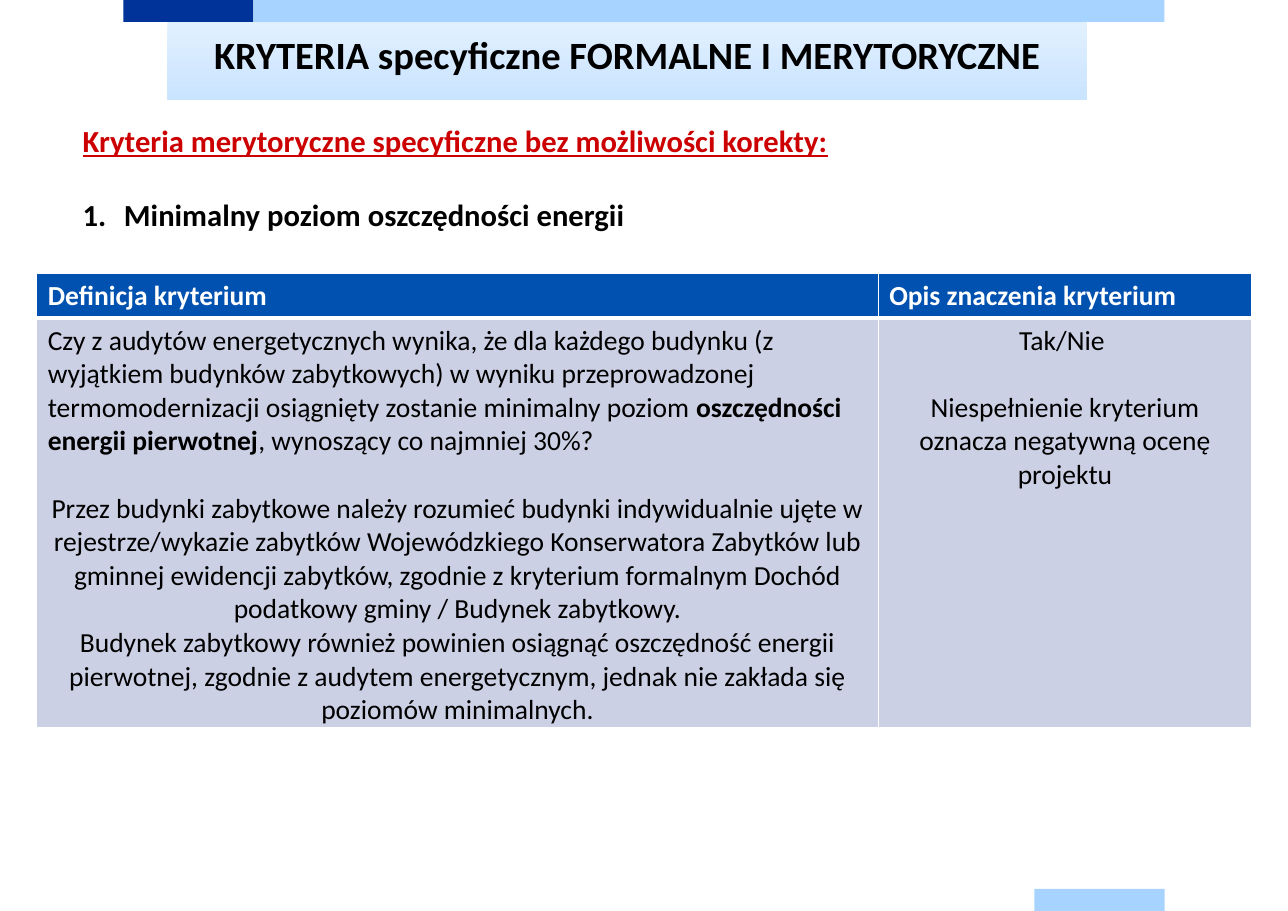
from dataclasses import dataclass

from lxml.etree import SubElement
from pptx import Presentation
from pptx.dml.color import RGBColor
from pptx.enum.shapes import MSO_SHAPE
from pptx.enum.text import MSO_ANCHOR, MSO_AUTO_SIZE, PP_ALIGN
from pptx.oxml.ns import qn
from pptx.util import Pt

FONT = "Calibri"
NAVY = RGBColor(0x00, 0x33, 0x99)
SKY = RGBColor(0xA6, 0xD3, 0xFF)
PALE = RGBColor(0xE1, 0xF0, 0xFF)
MIST = RGBColor(0xCA, 0xE4, 0xFF)
BLUE = RGBColor(0x00, 0x51, 0xB0)
GREY = RGBColor(0xCC, 0xD0, 0xE4)
RED = RGBColor(0xCC, 0x00, 0x00)
BLACK = RGBColor(0x00, 0x00, 0x00)
WHITE = RGBColor(0xFF, 0xFF, 0xFF)


@dataclass
class Bar:
    left: float
    top: float
    width: float
    color: RGBColor


@dataclass
class Para:
    """Text pieces, every second one in the opposite weight."""
    texts: list[str]
    size: float = 18
    color: RGBColor = BLACK
    bold: bool = False
    line: bool = False
    align: PP_ALIGN = PP_ALIGN.LEFT
    gap: float = 0
    bullet: str = "buNone"


@dataclass
class Cell:
    paras: list[Para]
    fill: RGBColor
    top: float
    bottom: float
    foot: float


MID = PP_ALIGN.CENTER
BAR_H = 14.4
BARS = [
    Bar(80.6, 0, 85, NAVY),
    Bar(165.6, 0, 595.4, SKY),
    Bar(676, 581, 85, SKY),
]
TITLE = Para(["KRYTERIA specyficzne FORMALNE I MERYTORYCZNE"], 25.2, bold=True, align=MID)
LIST = [
    Para(["Kryteria merytoryczne specyficzne bez możliwości korekty:"],
         20, RED, bold=True, line=True),
    Para(["Minimalny poziom oszczędności energii"],
         20, bold=True, gap=24.4, bullet="buAutoNum"),
]
HEAD = ["Definicja kryterium", "Opis znaczenia kryterium"]
BODY = [
    [
        Para(["Czy z audytów energetycznych wynika, że dla każdego budynku "
              "(z wyjątkiem budynków zabytkowych) w wyniku przeprowadzonej "
              "termomodernizacji osiągnięty zostanie minimalny poziom ",
              "oszczędności energii pierwotnej",
              ", wynoszący co najmniej 30%?"]),
        Para(["Przez budynki zabytkowe należy rozumieć budynki indywidualnie "
              "ujęte w rejestrze/wykazie zabytków Wojewódzkiego Konserwatora "
              "Zabytków lub gminnej ewidencji zabytków, zgodnie z kryterium "
              "formalnym Dochód podatkowy gminy / Budynek zabytkowy."],
             align=MID, gap=22),
        Para(["Budynek zabytkowy również powinien osiągnąć oszczędność energii "
              "pierwotnej, zgodnie z audytem energetycznym, jednak nie zakłada "
              "się poziomów minimalnych."], align=MID),
    ],
    [
        Para(["Tak/Nie "], align=MID),
        Para(["Niespełnienie kryterium oznacza negatywną ocenę projektu"],
             align=MID, gap=22),
    ],
]
ROWS = [
    [Cell([Para([name], color=WHITE, bold=True)], BLUE, 1, 3, 3.6) for name in HEAD],
    [Cell(paras, GREY, 3, 1, 0) for paras in BODY],
]


def place(shape, left: float, top: float, width: float, height: float) -> None:
    shape.left, shape.top = Pt(left), Pt(top)
    shape.width, shape.height = Pt(width), Pt(height)


def write(frame, paras: list[Para]) -> None:
    for i, para in enumerate(paras):
        item = frame.paragraphs[0] if i == 0 else frame.add_paragraph()
        props = item._p.get_or_add_pPr()
        mark = SubElement(props, qn(f"a:{para.bullet}"))
        dent = 0
        if para.bullet == "buAutoNum":
            mark.set("type", "arabicPeriod")
            dent = Pt(27)
        props.set("marL", str(dent))
        props.set("indent", str(-dent))
        item.alignment = para.align
        item.space_before = Pt(para.gap)
        for n, text in enumerate(para.texts):
            run = item.add_run()
            run.text = text
            font = run.font
            font.name, font.size = FONT, Pt(para.size)
            font.bold = para.bold != (n % 2 == 1)
            font.underline = para.line
            font.color.rgb = para.color


def edge(cell, tag: str, width: float) -> None:
    """Add a white border on one side of a table cell."""
    line = SubElement(cell._tc.get_or_add_tcPr(), qn(f"a:{tag}"), w=str(Pt(width)))
    fill = SubElement(line, qn("a:solidFill"))
    SubElement(fill, qn("a:srgbClr"), val=str(WHITE))


def draw_bar(slide, bar: Bar) -> None:
    shape = slide.shapes.add_shape(
        MSO_SHAPE.RECTANGLE, Pt(bar.left), Pt(bar.top), Pt(bar.width), Pt(BAR_H))
    shape.shadow.inherit = False
    shape.fill.solid()
    shape.fill.fore_color.rgb = bar.color
    shape.line.fill.background()


def draw_title(slide) -> None:
    title = slide.shapes.title
    place(title, 109.4, BAR_H, 601.2, 51.1)
    title.fill.gradient()
    title.fill.gradient_angle = 270
    for stop, color, spot in zip(title.fill.gradient_stops, (PALE, MIST), (0, 1)):
        stop.color.rgb, stop.position = color, spot
    frame = title.text_frame
    frame.margin_left = frame.margin_right = 0
    frame.margin_top = frame.margin_bottom = 0
    frame.vertical_anchor = MSO_ANCHOR.TOP
    frame.auto_size = MSO_AUTO_SIZE.NONE
    write(frame, [TITLE])
    frame.paragraphs[0].line_spacing = Pt(36)


def draw_list(slide) -> None:
    body = slide.placeholders[1]
    place(body, 46.8, 76.3, 748, 101.5)
    body.text_frame.auto_size = MSO_AUTO_SIZE.NONE
    write(body.text_frame, LIST)


def draw_table(slide) -> None:
    table = slide.shapes.add_table(
        2, 2, Pt(24), Pt(178.8), Pt(794), Pt(294)).table
    table.horz_banding = False
    for col, width in zip(table.columns, (550, 244)):
        col.width = Pt(width)
    for row, height in zip(table.rows, (28.5, 265.5)):
        row.height = Pt(height)
    for r, row in enumerate(ROWS):
        for c, data in enumerate(row):
            cell = table.cell(r, c)
            cell.margin_bottom = Pt(data.foot)
            sides = {"lnL": 1, "lnR": 1, "lnT": data.top, "lnB": data.bottom}
            for tag, width in sides.items():
                edge(cell, tag, width)
            cell.fill.solid()
            cell.fill.fore_color.rgb = data.fill
            write(cell.text_frame, data.paras)


def main() -> None:
    deck = Presentation()
    deck.slide_width, deck.slide_height = Pt(841.7), Pt(595.4)
    slide = deck.slides.add_slide(deck.slide_layouts[1])
    for bar in BARS:
        draw_bar(slide, bar)
    draw_title(slide)
    draw_list(slide)
    draw_table(slide)
    deck.save("out.pptx")


if __name__ == "__main__":
    main()
